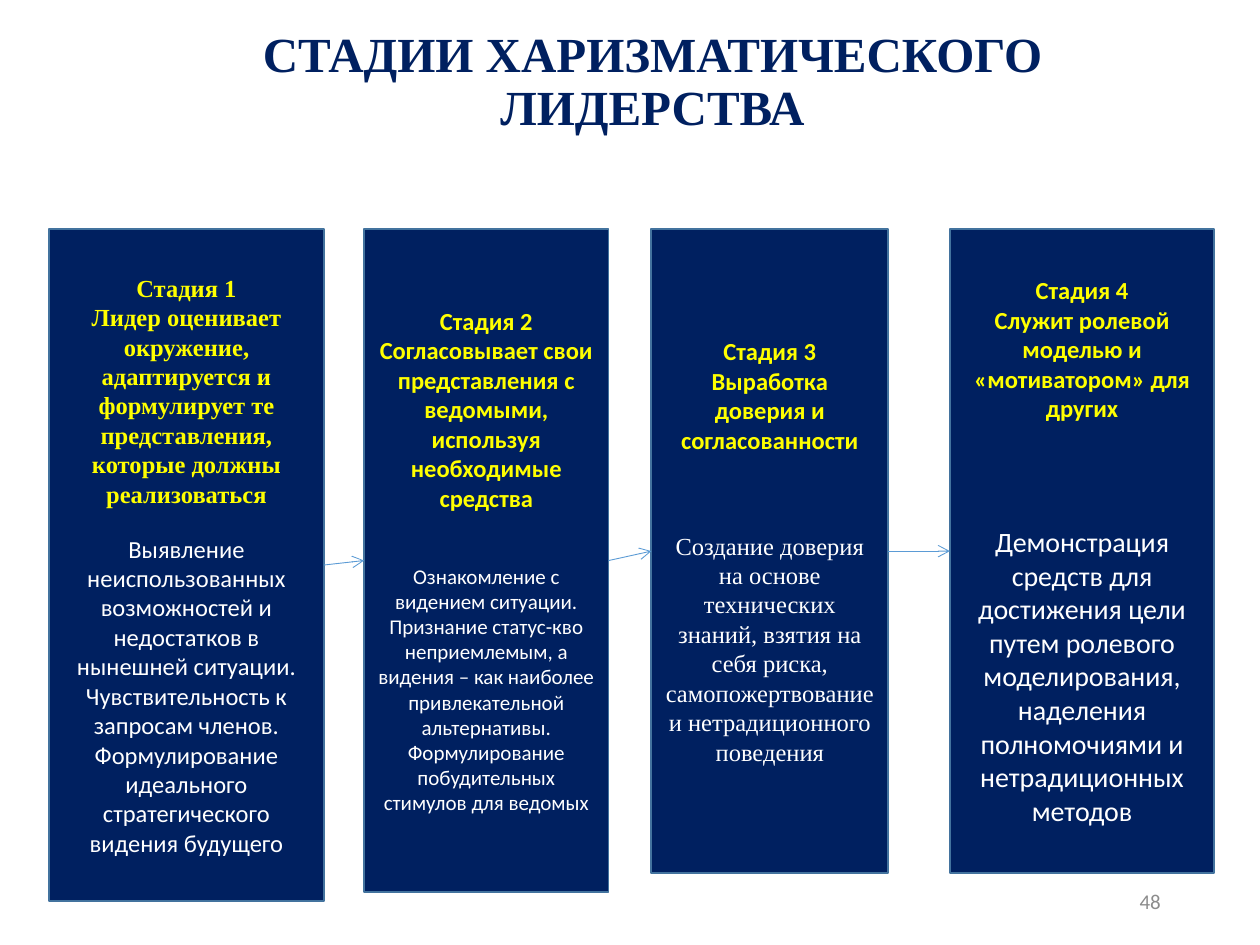
from dataclasses import dataclass

from lxml.etree import SubElement
from pptx import Presentation
from pptx.dml.color import RGBColor
from pptx.enum.shapes import MSO_CONNECTOR, MSO_SHAPE
from pptx.enum.text import MSO_ANCHOR, PP_ALIGN
from pptx.oxml.ns import qn
from pptx.util import Cm, Pt

NAVY = RGBColor(0x00, 0x20, 0x60)
BORDER = RGBColor(0x43, 0x73, 0x9E)
YELLOW = RGBColor(0xFF, 0xFF, 0x00)
WHITE = RGBColor(0xFF, 0xFF, 0xFF)
GRAY = RGBColor(0x8C, 0x8C, 0x8C)
ARROW_BLUE = RGBColor(0x5B, 0x9B, 0xD5)
SANS = "Calibri"
SERIF = "Times New Roman"
STAGE_TOP = 4.62
GAP_LINE = 14.6


@dataclass
class Stage:
    left: float
    width: float
    height: float
    heading: str
    body: str
    gap_lines: int
    heading_font: str = SANS
    body_font: str = SANS
    body_size: int = 14


STAGES = [
    Stage(0.99, 5.54, 13.54,
          "Лидер оценивает окружение, адаптируется и формулирует те представления, "
          "которые должны реализоваться",
          "Выявление неиспользованных возможностей и недостатков в нынешней ситуации. "
          "Чувствительность к запросам членов. Формулирование идеального "
          "стратегического видения будущего",
          gap_lines=1, heading_font=SERIF),
    Stage(7.34, 4.93, 13.36,
          "Согласовывает свои представления с ведомыми, используя необходимые средства",
          "Ознакомление с видением ситуации. Признание статус-кво неприемлемым, а "
          "видения – как наиболее привлекательной альтернативы. Формулирование "
          "побудительных стимулов для ведомых",
          gap_lines=2, body_size=12),
    Stage(13.13, 4.78, 12.98,
          "Выработка доверия и согласованности",
          "Создание доверия на основе технических знаний, взятия на себя риска, "
          "самопожертвование и нетрадиционного поведения",
          gap_lines=3, body_font=SERIF),
    Stage(19.15, 5.33, 12.98,
          "Служит ролевой моделью и «мотиватором» для других",
          "Демонстрация средств для достижения цели путем ролевого моделирования, "
          "наделения полномочиями и нетрадиционных методов",
          gap_lines=4, body_size=16),
]


def write_paragraph(paragraph, text, font=SANS, size=14, color=WHITE, bold=False,
                    align=PP_ALIGN.CENTER, before=0, line_spacing=1.0):
    paragraph.alignment = align
    paragraph.space_before = Pt(before)
    paragraph.line_spacing = line_spacing
    span = paragraph.add_run()
    span.text = text
    span.font.name = font
    span.font.size = Pt(size)
    span.font.bold = bold
    span.font.color.rgb = color


def add_text(page, left, top, width, height, text, **text_format):
    box = page.shapes.add_textbox(Cm(left), Cm(top), Cm(width), Cm(height))
    frame = box.text_frame
    frame.word_wrap = True
    frame.vertical_anchor = MSO_ANCHOR.MIDDLE
    write_paragraph(frame.paragraphs[0], text, **text_format)


def add_stage(page, number, stage):
    box = page.shapes.add_shape(MSO_SHAPE.RECTANGLE, Cm(stage.left), Cm(STAGE_TOP),
                                Cm(stage.width), Cm(stage.height))
    box.shadow.inherit = False
    box.fill.solid()
    box.fill.fore_color.rgb = NAVY
    box.line.color.rgb = BORDER
    box.line.width = Pt(1)
    frame = box.text_frame
    frame.word_wrap = True
    frame.vertical_anchor = MSO_ANCHOR.MIDDLE
    heading = {"font": stage.heading_font, "color": YELLOW, "bold": True}
    write_paragraph(frame.paragraphs[0], f"Стадия {number}", **heading)
    write_paragraph(frame.add_paragraph(), stage.heading, **heading)
    write_paragraph(frame.add_paragraph(), stage.body, font=stage.body_font,
                    size=stage.body_size, before=stage.gap_lines * GAP_LINE)
    return box


def add_arrow(page, start, end):
    arrow = page.shapes.add_connector(MSO_CONNECTOR.STRAIGHT, 0, 0, 0, 0)
    arrow.begin_connect(start, 3)
    arrow.end_connect(end, 1)
    arrow.line.color.rgb = ARROW_BLUE
    arrow.line.width = Pt(0.5)
    SubElement(arrow.line._get_or_add_ln(), qn("a:tailEnd"), type="arrow")
    SubElement(arrow._element.spPr, qn("a:effectLst"))


def main():
    deck = Presentation()
    deck.slide_width = Cm(25.4)
    deck.slide_height = Cm(19.05)
    page = deck.slides.add_slide(deck.slide_layouts[6])
    add_text(page, 2.21, 0.46, 21.89, 2.44, "СТАДИИ ХАРИЗМАТИЧЕСКОГО ЛИДЕРСТВА",
             font=SERIF, size=28, color=NAVY, bold=True, line_spacing=0.9)
    add_text(page, 17.93, 17.65, 5.72, 1.02, "48", size=12, color=GRAY,
             align=PP_ALIGN.RIGHT)
    boxes = [add_stage(page, number, stage) for number, stage in enumerate(STAGES, 1)]
    for start, end in zip(boxes, boxes[1:]):
        add_arrow(page, start, end)
    deck.save("out.pptx")


if __name__ == "__main__":
    main()
